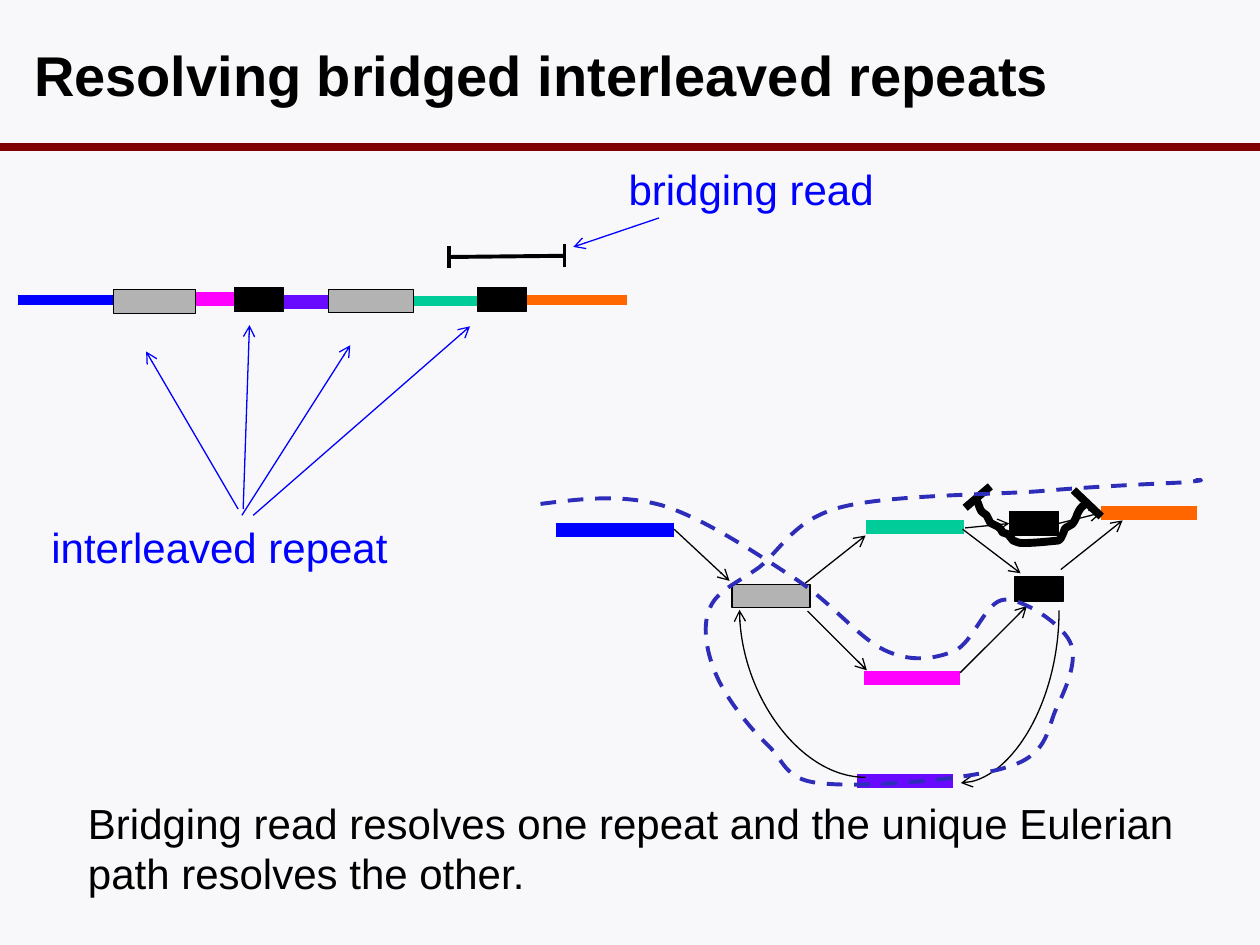
from dataclasses import dataclass
from lxml.etree import SubElement
from pptx import Presentation
from pptx.dml.color import RGBColor
from pptx.enum.dml import MSO_LINE
from pptx.enum.shapes import MSO_CONNECTOR, MSO_SHAPE
from pptx.enum.text import MSO_ANCHOR, MSO_AUTO_SIZE, PP_ALIGN
from pptx.oxml.ns import qn
from pptx.util import Inches, Pt


@dataclass(frozen=True)
class Theme:
    """Colours, font and type sizes of the slide."""
    font: str = "Arial"
    head: int = 32
    body: int = 24
    paper: str = "F8F8FA"
    rule: str = "800000"
    black: str = "000000"
    grey: str = "B3B3B3"
    blue: str = "0000FF"
    green: str = "00CC99"
    pink: str = "FF00FF"
    purple: str = "670AFF"
    orange: str = "FF6600"
    tour: str = "2D2DB9"


THEME = Theme()


def style(frame, size, color, bold=False):
    """Format every run of a text frame."""
    for para in frame.paragraphs:
        para.alignment = PP_ALIGN.LEFT
        for run in para.runs:
            font = run.font
            font.name, font.size, font.bold = THEME.font, Pt(size), bold
            font.color.rgb = RGBColor.from_string(color)


def ink(line, color, width):
    """Set the colour and width of a line."""
    line.color.rgb = RGBColor.from_string(color)
    line.width = Pt(width)


class Pen:
    """Draws on a slide relative to the corner of a region."""

    def __init__(self, slide, left, top):
        """Keep the shapes and the corner."""
        self.shapes, self.left, self.top = slide.shapes, left, top

    def spot(self, x, y):
        """Turn a place in the region into slide lengths."""
        return Inches(self.left + x), Inches(self.top + y)

    def line(self, start, end, color, width, kind=MSO_CONNECTOR.STRAIGHT):
        """Draw a plain connector."""
        wire = self.shapes.add_connector(kind, *self.spot(*start), *self.spot(*end))
        ink(wire.line, color, width)
        SubElement(wire._element.spPr, qn("a:effectLst"))
        return wire

    def arrow(self, start, end, color=THEME.black, kind=MSO_CONNECTOR.STRAIGHT):
        """Draw a thin connector with an open head."""
        wire = self.line(start, end, color, 0.75, kind)
        SubElement(wire.line._get_or_add_ln(), qn("a:tailEnd"), type="arrow")
        return wire

    def bend(self, start, end, turn=0):
        """Draw a quarter-curve arrow, turned by some degrees."""
        wire = self.arrow(start, end, kind=MSO_CONNECTOR.CURVE)
        props = wire._element.spPr
        props.find(qn("a:prstGeom")).set("prst", "curvedConnector2")
        props.find(qn("a:xfrm")).set("rot", str(turn * 60000))

    def block(self, x, y, wide, high, fill):
        """Draw a repeat as a box."""
        box = self.shapes.add_shape(MSO_SHAPE.RECTANGLE, *self.spot(x, y),
                                    Inches(wide), Inches(high))
        box.shadow.inherit = False
        box.fill.solid()
        box.fill.fore_color.rgb = RGBColor.from_string(fill)
        ink(box.line, THEME.black, 0.75)
        return box

    def curve(self, points, color, width):
        """Draw an open path of cubic curves, three points to each curve."""
        spots = [self.spot(*point) for point in points]
        form = self.shapes.build_freeform(*spots[0])
        form.add_line_segments(spots[1:], close=False)
        shape = form.convert_to_shape()
        shape.shadow.inherit = False
        shape.fill.background()
        ink(shape.line, color, width)
        trail = next(shape._element.iter(qn("a:path")))
        steps = trail.findall(qn("a:lnTo"))
        for first in range(0, len(steps), 3):
            cubic = SubElement(trail, qn("a:cubicBezTo"))
            for step in steps[first:first + 3]:
                cubic.append(step[0])
                trail.remove(step)
        return shape

    def label(self, x, y, wide, high, text, color, wrap=False):
        """Place a text box."""
        box = self.shapes.add_textbox(*self.spot(x, y), Inches(wide), Inches(high))
        frame = box.text_frame
        frame.text = text
        frame.word_wrap = wrap
        frame.auto_size = MSO_AUTO_SIZE.SHAPE_TO_FIT_TEXT
        style(frame, THEME.body, color)


def header(slide, left, top):
    """Place the title and the rule below it."""
    pen, title = Pen(slide, left, top), slide.shapes.title
    pen.line((0, 1.17), (10, 1.17), THEME.rule, 4.5)
    title.left, title.top = pen.spot(0.17, 0.17)
    title.width, title.height = Inches(9.15), Inches(0.83)
    frame = title.text_frame
    frame.text = "Resolving bridged interleaved repeats"
    frame.vertical_anchor = MSO_ANCHOR.MIDDLE
    style(frame, THEME.head, THEME.black, True)


def strand(slide, left, top):
    """Draw the sequence with its repeats, the read and the labels."""
    pen = Pen(slide, left, top)
    for start, end, y, color, width in (
            (4.09, 4.98, 1.18, THEME.orange, 6), (2.18, 2.81, 1.2, THEME.purple, 8),
            (2.99, 3.89, 1.19, THEME.green, 6), (0.14, 1.13, 1.18, THEME.blue, 6),
            (1.27, 1.91, 1.17, THEME.pink, 8)):
        pen.line((start, y), (end, y), color, width)
    for x, wide, high in ((0.9, 0.65, 0.19), (2.61, 0.67, 0.18)):
        pen.block(x, 1.1, wide, high, THEME.grey)
    for x in (3.79, 1.86):
        pen.block(x, 1.08, 0.39, 0.19, THEME.black)
    pen.label(0.31, 2.89, 2.9, 0.5, "interleaved repeat", THEME.blue)
    pen.label(4.89, 0.05, 2.17, 0.5, "bridging read", THEME.blue)
    for start, end in (((1.89, 2.84), (1.16, 1.59)), ((1.92, 2.89), (2.78, 1.54)),
                       ((2.01, 2.89), (3.73, 1.39)), ((1.93, 2.84), (1.98, 1.38)),
                       ((5.23, 0.53), (4.55, 0.76))):
        pen.arrow(start, end, THEME.blue)
    for start, end in (((3.55, 0.84), (4.49, 0.83)), ((3.56, 0.93), (3.56, 0.75)),
                       ((4.48, 0.92), (4.48, 0.74))):
        pen.line(start, end, THEME.black, 2.25)


def graph(slide, left, top):
    """Draw the graph, the bridging read and the Eulerian path."""
    pen = Pen(slide, left, top)
    for start, end, y, color in (
            (2.87, 3.65, 0.68, THEME.green), (0.41, 1.35, 0.71, THEME.blue),
            (2.86, 3.62, 1.88, THEME.pink), (4.74, 5.5, 0.57, THEME.orange),
            (2.8, 3.56, 2.7, THEME.purple)):
        pen.line((start, y), (end, y), color, 8)
    pen.block(1.81, 1.14, 0.62, 0.18, THEME.grey)
    pen.block(4.05, 1.08, 0.39, 0.19, THEME.black)
    for start, end in (((1.35, 0.7), (1.79, 1.11)), ((2.41, 1.35), (2.88, 1.82)),
                       ((3.62, 1.84), (4.15, 1.31)), ((2.39, 1.13), (2.87, 0.75)),
                       ((3.64, 0.7), (4.1, 1.05)), ((4.42, 1.02), (4.91, 0.63))):
        pen.arrow(start, end)
    pen.bend((3.33, 1.64), (4.7, 2.42), 90)
    pen.bend((2.87, 2.67), (1.87, 1.34))
    for start, end in (((3.66, 0.53), (3.86, 0.36)), ((4.74, 0.6), (4.52, 0.39))):
        pen.line(start, end, THEME.black, 4.5)
    pen.curve((
        (3.75, 0.47), (3.77, 0.5), (3.77, 0.53), (3.79, 0.56),
        (3.8, 0.57), (3.82, 0.58), (3.83, 0.59), (3.84, 0.61), (3.85, 0.63), (3.86, 0.65),
        (3.88, 0.66), (3.9, 0.67), (3.92, 0.68), (3.99, 0.74), (3.91, 0.71), (4, 0.74),
        (4.02, 0.75), (4.02, 0.78), (4.04, 0.79), (4.06, 0.8), (4.09, 0.81), (4.11, 0.81),
        (4.21, 0.81), (4.3, 0.8), (4.4, 0.79), (4.41, 0.78), (4.43, 0.77), (4.43, 0.75),
        (4.44, 0.74), (4.44, 0.72), (4.45, 0.7), (4.46, 0.68), (4.49, 0.68), (4.51, 0.66),
        (4.52, 0.65), (4.53, 0.63), (4.54, 0.61), (4.55, 0.59), (4.55, 0.57), (4.56, 0.56),
        (4.57, 0.54), (4.58, 0.53), (4.59, 0.52), (4.6, 0.51), (4.62, 0.5), (4.63, 0.49),
    ), THEME.black, 4.5)
    bridge = pen.block(4.01, 0.56, 0.39, 0.19, THEME.black)
    pen.arrow((4.4, 0.65), (4.74, 0.57)).begin_connect(bridge, 3)
    pen.arrow((3.66, 0.69), (4.01, 0.65)).end_connect(bridge, 1)
    tour = pen.curve((
        (0.29, 0.5), (0.61, 0.46), (0.92, 0.42), (1.25, 0.51),
        (1.58, 0.61), (2, 0.89), (2.29, 1.08), (2.59, 1.27), (2.81, 1.56), (3.02, 1.66),
        (3.23, 1.76), (3.41, 1.73), (3.57, 1.67), (3.73, 1.6), (3.82, 1.27), (3.97, 1.26),
        (4.12, 1.25), (4.42, 1.45), (4.49, 1.59), (4.56, 1.73), (4.47, 1.94), (4.39, 2.11),
        (4.31, 2.27), (4.33, 2.48), (4.02, 2.58), (3.71, 2.69), (2.87, 2.75), (2.55, 2.72),
        (2.23, 2.7), (2.24, 2.56), (2.1, 2.42), (1.95, 2.28), (1.77, 2.05), (1.69, 1.87),
        (1.61, 1.69), (1.57, 1.48), (1.63, 1.34), (1.68, 1.19), (1.85, 1.13), (2.03, 1),
        (2.2, 0.86), (2.3, 0.63), (2.66, 0.53), (3.03, 0.43), (3.79, 0.43), (4.24, 0.4),
        (4.69, 0.36), (5.17, 0.34), (5.38, 0.33), (5.59, 0.31), (5.54, 0.31), (5.49, 0.31),
    ), THEME.tour, 2.25)
    tour.line.dash_style = MSO_LINE.DASH


def caption(slide, left, top):
    """Place the closing statement."""
    text = ("Bridging read resolves one repeat and the unique Eulerian\n"
            "path resolves the other.")
    Pen(slide, left, top).label(0, 0, 8.9, 0.91, text, THEME.black, True)


def main():
    """Build and save the slide."""
    deck = Presentation()
    deck.slide_width, deck.slide_height = Inches(10), Inches(7.5)
    slide = deck.slides.add_slide(deck.slide_layouts[5])
    slide.background.fill.solid()
    slide.background.fill.fore_color.rgb = RGBColor.from_string(THEME.paper)
    header(slide, 0, 0)
    strand(slide, 0, 1.2)
    graph(slide, 4, 3.5)
    caption(slide, 0.6, 6.28)
    deck.save("out.pptx")


if __name__ == "__main__":
    main()
